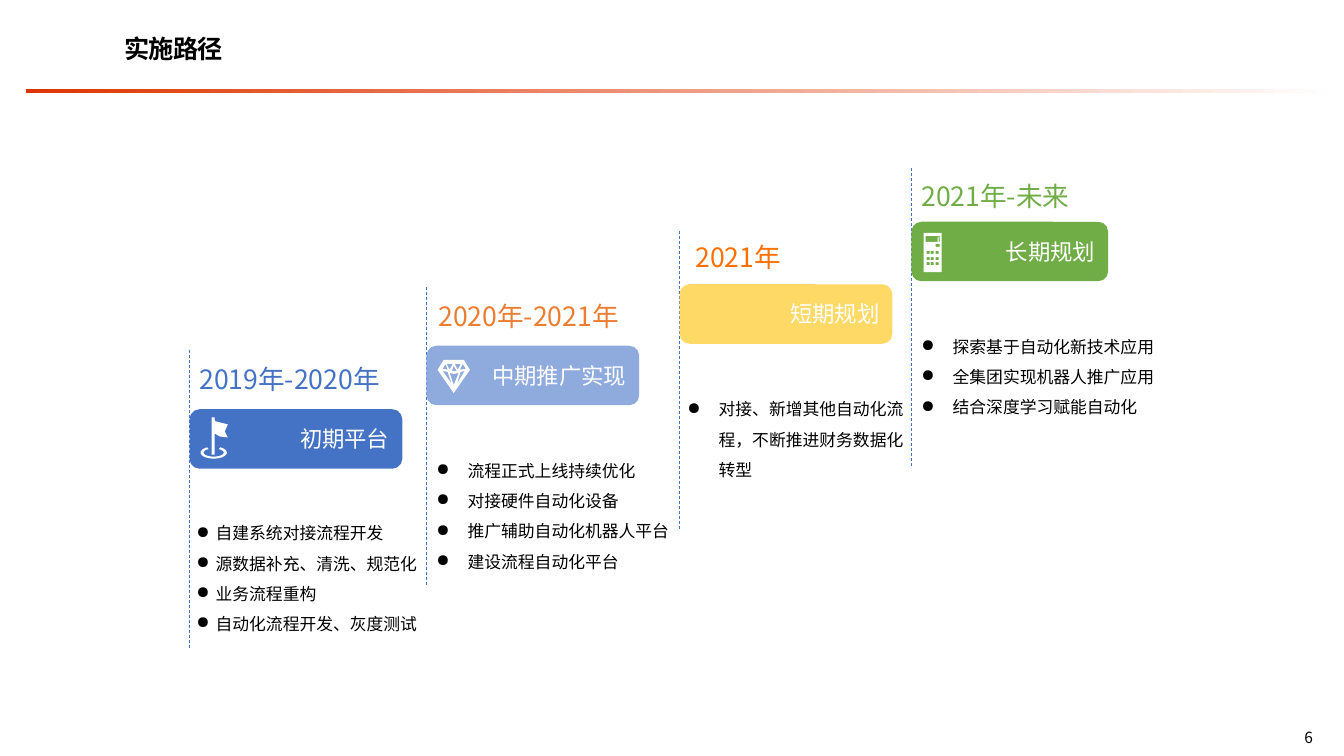
from dataclasses import dataclass
from itertools import product
from math import cos, radians, sin

from lxml.etree import SubElement
from pptx import Presentation
from pptx.dml.color import RGBColor
from pptx.enum.dml import MSO_LINE
from pptx.enum.shapes import MSO_CONNECTOR, MSO_SHAPE
from pptx.enum.text import MSO_ANCHOR, PP_ALIGN
from pptx.oxml.ns import qn
from pptx.util import Pt


def px(value):
    return round(value * 9144)


@dataclass(frozen=True)
class Theme:
    font: str = "Noto Sans CJK SC"
    text: str = "000000"
    white: str = "FFFFFF"
    accent: str = "DE3500"
    guide: str = "4472C4"
    title_size: int = 18
    date_size: int = 19
    label_size: int = 16
    body_size: int = 12
    number_size: int = 11


THEME = Theme()


@dataclass(frozen=True)
class Stage:
    date: str
    label: str
    tasks: tuple
    color: str
    date_color: str
    box: tuple
    guide_rise: int
    date_offset: tuple
    list_offset: tuple
    list_width: int
    hang: int = 31
    icon: tuple = ()


def rectangle(left, top, right, bottom):
    return [(left, top), (right, top), (right, bottom), (left, bottom)]


def arc(center_x, center_y, radius_x, radius_y, start, end, steps=40):
    angles = [radians(start + (end - start) * i / steps) for i in range(steps + 1)]
    return [(center_x + radius_x * cos(a), center_y + radius_y * sin(a)) for a in angles]


FLAG = (
    [(25, 11), (26, 12), (30, 13), (38, 15), (35, 22), (38, 28), (30, 27),
     (25, 24), (25, 45), (22, 45), (22, 8), (25, 8)],
    arc(24, 43, 13, 6, -60, 240) + arc(24, 43, 10, 4, 240, -60),
)
DIAMOND = (
    [(27, 47), (11, 24), (17, 14), (37, 14), (43, 24)],
    [(32, 27), (27, 28), (23, 27), (27, 39)],
    [(34, 26), (30, 38), (38, 25)],
    [(25, 38), (21, 26), (16, 25)],
    [(16, 23), (23, 24), (21, 24), (19, 18)],
    [(20, 18), (23, 24), (26, 18)],
    [(25, 25), (30, 25), (27, 20)],
    [(28, 18), (31, 24), (34, 18)],
    [(36, 18), (33, 24), (32, 24), (39, 23)],
)
CALCULATOR = (
    rectangle(12, 11, 30, 50),
    rectangle(14, 14, 28, 20),
    rectangle(26, 15, 27, 20),
    rectangle(24, 22, 28, 25),
    *(rectangle(x, y, x + 3, y + 3) for x, y in product((15, 19, 24), (29, 35, 40))),
)

STAGES = (
    Stage("2019年-2020年", "初期平台",
          ("自建系统对接流程开发", "源数据补充、清洗、规范化", "业务流程重构", "自动化流程开发、灰度测试"),
          "4472C4", "4472C4", (188, 406, 211, 59), 59, (0, -51), (-3, 98), 245, 19, FLAG),
    Stage("2020年-2021年", "中期推广实现",
          ("流程正式上线持续优化", "对接硬件自动化设备", "推广辅助自动化机器人平台", "建设流程自动化平台"),
          "8FAADC", "ED7D31", (423, 343, 211, 59), 58, (2, -50), (0, 99), 253, icon=DIAMOND),
    Stage("2021年", "短期规划",
          ("对接、新增其他自动化流程，不断推进财务数据化转型",),
          "FFD966", "FF7001", (674, 282, 211, 59), 53, (6, -48), (-2, 99), 250),
    Stage("2021年-未来", "长期规划",
          ("探索基于自动化新技术应用", "全集团实现机器人推广应用", "结合深度学习赋能自动化"),
          "70AD47", "70AD47", (904, 220, 195, 59), 53, (0, -46), (0, 99), 258, icon=CALCULATOR),
)


def write_text(frame, lines, size, color=THEME.text, bold=False, align=PP_ALIGN.LEFT,
               anchor=MSO_ANCHOR.TOP, insets=(10, 5), hang=0, spacing=None, tracking=None):
    frame.word_wrap = True
    frame.vertical_anchor = anchor
    frame.margin_left = frame.margin_right = px(insets[0])
    frame.margin_top = frame.margin_bottom = px(insets[1])
    for index, line in enumerate(lines):
        paragraph = frame.add_paragraph() if index else frame.paragraphs[0]
        paragraph.alignment = align
        if spacing:
            paragraph.line_spacing = spacing
        if hang:
            properties = paragraph._p.get_or_add_pPr()
            properties.set("marL", str(px(hang)))
            properties.set("indent", str(-px(hang)))
            SubElement(properties, qn("a:buChar")).set("char", "●")
        run = paragraph.add_run()
        run.text = line
        run.font.size = Pt(size)
        run.font.bold = bold
        run.font.color.rgb = RGBColor.from_string(color)
        run.font.name = THEME.font
        run_properties = run._r.get_or_add_rPr()
        SubElement(run_properties, qn("a:ea")).set("typeface", THEME.font)
        if tracking:
            run_properties.set("spc", str(tracking))


def add_text(slide, box, lines, **text_format):
    shape = slide.shapes.add_textbox(*map(px, box))
    write_text(shape.text_frame, lines, **text_format)


def paint(shape, color):
    shape.shadow.inherit = False
    shape.fill.solid()
    shape.fill.fore_color.rgb = RGBColor.from_string(color)
    shape.line.fill.background()


def add_guide(slide, x, top, height):
    guide = slide.shapes.add_connector(
        MSO_CONNECTOR.STRAIGHT, px(x), px(top), px(x), px(top + height))
    guide.line.color.rgb = RGBColor.from_string(THEME.guide)
    guide.line.width = Pt(0.5)
    guide.line.dash_style = MSO_LINE.DASH
    SubElement(guide._element.spPr, qn("a:effectLst"))


def add_icon(slide, left, top, outlines):
    contours = [[(px(left + x), px(top + y)) for x, y in outline] for outline in outlines]
    builder = slide.shapes.build_freeform(*contours[0][0])
    for index, (start, *rest) in enumerate(contours):
        if index:
            builder.move_to(*start)
        builder.add_line_segments(rest, close=True)
    paint(builder.convert_to_shape(), THEME.white)


def add_stage(slide, stage):
    left, top, width, height = stage.box
    add_guide(slide, left, top - stage.guide_rise, 296)
    date_x, date_y = stage.date_offset
    add_text(slide, (left + date_x, top + date_y, 226, 42), [stage.date],
             size=THEME.date_size, color=stage.date_color)
    label = slide.shapes.add_shape(MSO_SHAPE.ROUNDED_RECTANGLE, *map(px, stage.box))
    paint(label, stage.color)
    write_text(label.text_frame, [stage.label], size=THEME.label_size, color=THEME.white,
               align=PP_ALIGN.RIGHT, anchor=MSO_ANCHOR.MIDDLE)
    if stage.icon:
        add_icon(slide, left, top, stage.icon)
    list_x, list_y = stage.list_offset
    add_text(slide, (left + list_x, top + list_y, stage.list_width, 10 + 30 * len(stage.tasks)),
             stage.tasks, size=THEME.body_size, hang=stage.hang, spacing=1.5)


def add_header(slide, box):
    left, top, width, height = box
    title = slide.shapes.title
    title.left, title.top = px(left + 89), px(top)
    title.width, title.height = px(1151), px(69)
    write_text(title.text_frame, ["实施路径"], size=THEME.title_size, bold=True,
               anchor=MSO_ANCHOR.MIDDLE, insets=(8, 4), tracking=-50)
    rule = slide.shapes.add_shape(
        MSO_SHAPE.RECTANGLE, px(left), px(top + height - 4), px(width), px(4))
    paint(rule, THEME.accent)
    rule.fill.gradient()
    rule.fill.gradient_angle = 0
    for stop, color in zip(rule.fill.gradient_stops, (THEME.accent, THEME.white)):
        stop.color.rgb = RGBColor.from_string(color)


def add_page_number(slide, box):
    add_text(slide, box, ["6"], size=THEME.number_size, align=PP_ALIGN.CENTER,
             anchor=MSO_ANCHOR.MIDDLE)


def main():
    presentation = Presentation()
    presentation.slide_width, presentation.slide_height = px(1333), px(750)
    slide = presentation.slides.add_slide(presentation.slide_layouts[5])
    add_header(slide, (26, 14, 1299, 78))
    for stage in STAGES:
        add_stage(slide, stage)
    add_page_number(slide, (1263, 713, 70, 37))
    presentation.save("out.pptx")


if __name__ == "__main__":
    main()
